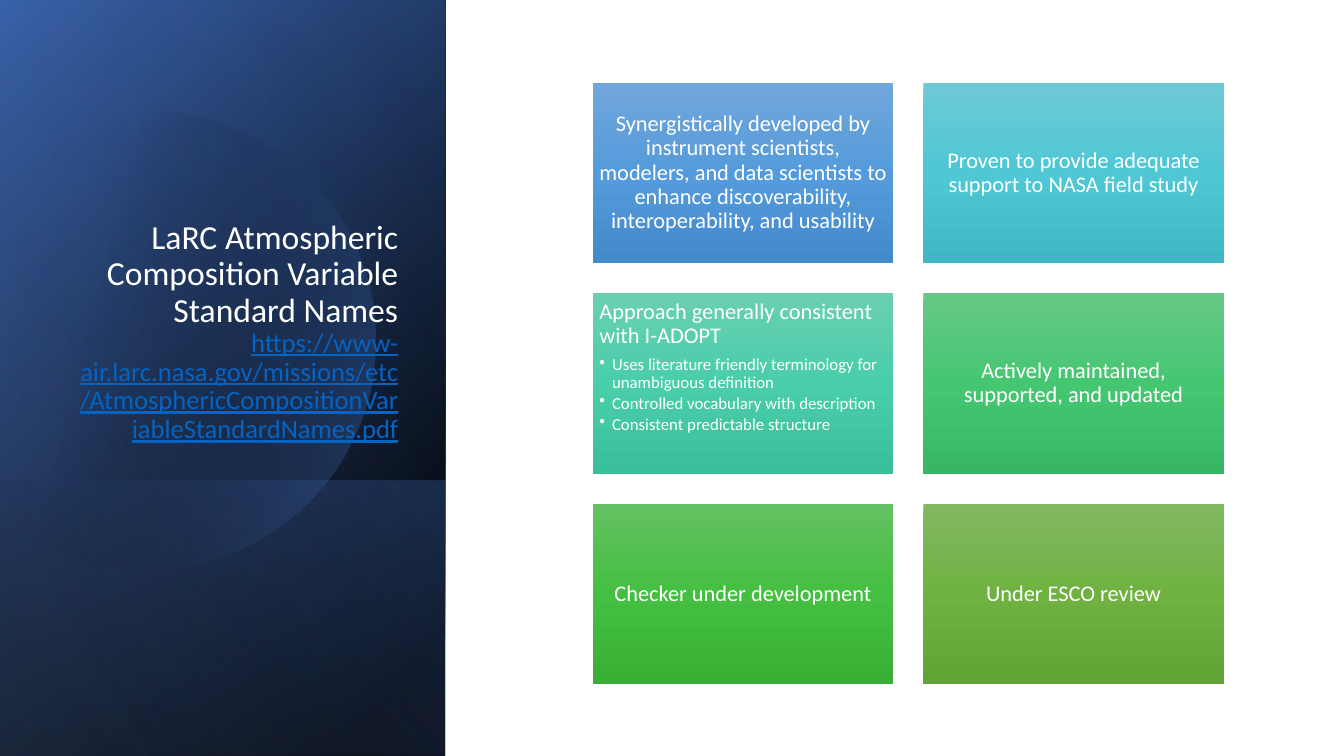
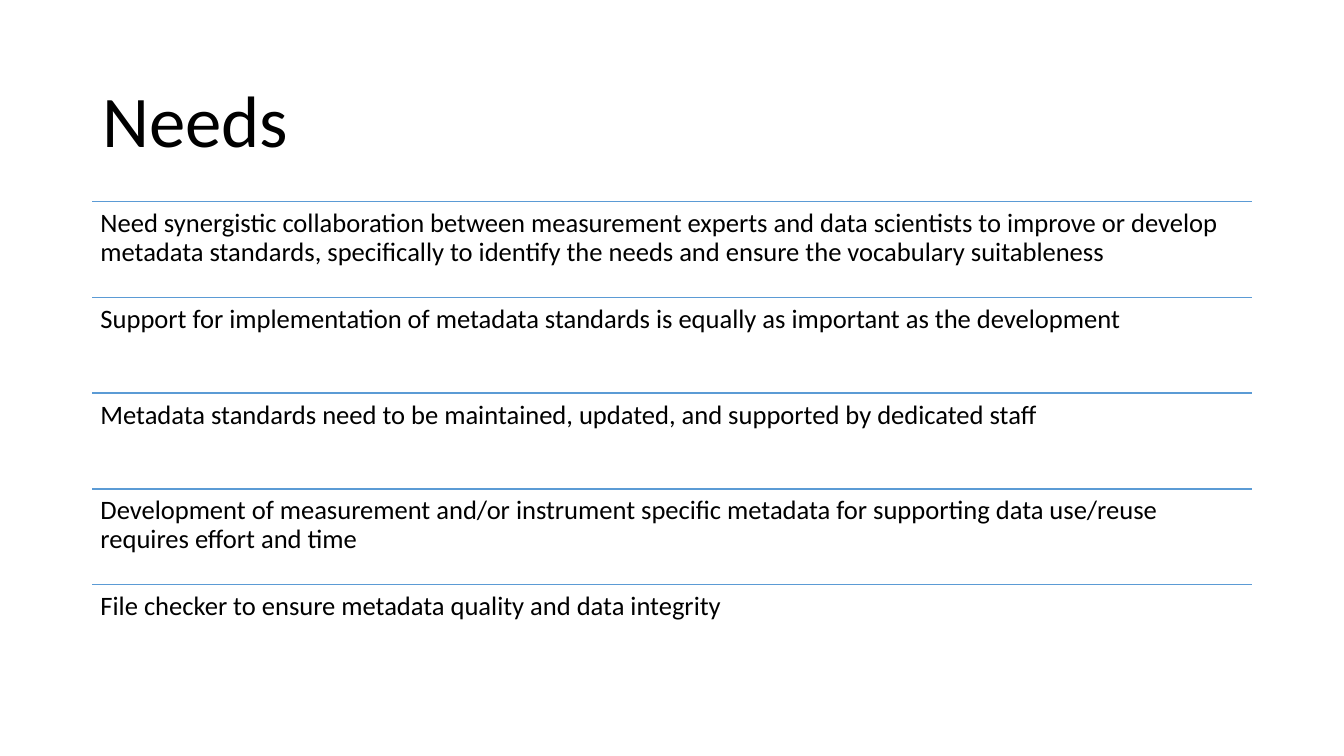
from dataclasses import dataclass
from math import acos, cos, sin

from lxml import etree
from pptx import Presentation
from pptx.dml.color import RGBColor as RGB
from pptx.enum.shapes import MSO_CONNECTOR as LINK, MSO_SHAPE as FORM
from pptx.enum.text import MSO_ANCHOR as ANCHOR, PP_ALIGN as ALIGN
from pptx.oxml.ns import qn
from pptx.util import Pt


@dataclass(frozen=True)
class Theme:
    font: str = "Calibri"
    white: str = "FFFFFF"
    black: str = "000000"
    navy: str = "2F5597"
    blue: str = "4472C4"
    pale: str = "8FAADC"
    link: str = "0563C1"
    rule: str = "5B9BD5"
    cards: tuple = (
        ("71A6DB", "559BDB", "448ACA"), ("6DCAD5", "4FC7D5", "3FB7C4"),
        ("69CFB1", "4ACEAA", "3BBE9A"), ("66C885", "45C772", "37B764"),
        ("64C162", "44BF41", "37B034"), ("81B861", "6FB242", "62A336"))
    head: int = 52
    side: int = 24
    body: int = 19
    card: int = 16
    note: int = 12


class Deck:
    def __init__(self, theme):
        self.theme = theme
        self.prs = Presentation()
        self.prs.slide_width, self.prs.slide_height = Pt(960), Pt(540)
        self.slide = None

    def page(self):
        self.slide = self.prs.slides.add_slide(self.prs.slide_layouts[6])

    def style(self, run, size, color):
        run.font.name = self.theme.font
        run.font.size = Pt(size)
        run.font.color.rgb = RGB.from_string(color)

    def blend(self, shape, stops, angle):
        """Fill with (position, colour, opacity) stops; clockwise angle."""
        shape.shadow.inherit = False
        shape.line.fill.background()
        shape.fill.gradient()
        shape.fill.gradient_angle = 360 - angle
        stoplist = next(shape._element.iter(qn("a:gsLst")))
        for old in list(stoplist):
            stoplist.remove(old)
        for pos, color, alpha in stops:
            stop = etree.SubElement(stoplist, qn("a:gs"), pos=str(pos * 1000))
            tint = etree.SubElement(stop, qn("a:srgbClr"), val=color)
            if alpha < 100:
                etree.SubElement(tint, qn("a:alpha"), val=str(alpha * 1000))

    def block(self, box, stops, angle):
        shape = self.slide.shapes.add_shape(FORM.RECTANGLE, *map(Pt, box))
        self.blend(shape, stops, angle)
        return shape

    def disc(self, x, y, r, stops, angle):
        """Circle cut off by the left slide edge."""
        end, count = acos(-x / r), 90
        turns = [end * (2 * i / count - 1) for i in range(count + 1)]
        dots = [(Pt(x + r * cos(t)), Pt(y + r * sin(t))) for t in turns]
        pen = self.slide.shapes.build_freeform(*dots[0])
        pen.add_line_segments(dots[1:], close=True)
        self.blend(pen.convert_to_shape(), stops, angle)

    def frame(self, shape, anchor, pad):
        frame = shape.text_frame
        frame.word_wrap = True
        frame.vertical_anchor = anchor
        frame.margin_left = frame.margin_right = Pt(pad[0])
        frame.margin_top = frame.margin_bottom = Pt(pad[1])
        return frame

    def para(self, para, size, color, align=ALIGN.LEFT, after=0):
        para.alignment = align
        para.line_spacing = 0.9
        para.space_after = Pt(after)
        for run in para.runs:
            self.style(run, size, color)

    def text(self, box, words, size, color, align=ALIGN.LEFT,
             anchor=ANCHOR.TOP, pad=(7.2, 3.6)):
        shape = self.slide.shapes.add_textbox(*map(Pt, box))
        frame = self.frame(shape, anchor, pad)
        frame.text = words
        self.para(frame.paragraphs[0], size, color, align)
        return frame.paragraphs[0]

    def card(self, box, colors, words, notes):
        t = self.theme
        stops = [(pos, c, 100) for pos, c in zip((0, 50, 100), colors)]
        shape = self.block(box, stops, 90)
        anchor = ANCHOR.TOP if notes else ANCHOR.MIDDLE
        frame = self.frame(shape, anchor, (4.8, 4.8))
        frame.text = words
        align = ALIGN.LEFT if notes else ALIGN.CENTER
        self.para(frame.paragraphs[0], t.card, t.white, align, 5.6)
        for note in notes:
            para = frame.add_paragraph()
            para.text = note
            self.para(para, t.note, t.white, after=1.8)
            props = para._p.get_or_add_pPr()
            props.set("marL", str(Pt(9)))
            props.set("indent", str(Pt(-9)))
            etree.SubElement(props, qn("a:buChar"), char="•")

    def rule(self, x, y, width):
        line = self.slide.shapes.add_connector(
            LINK.STRAIGHT, Pt(x), Pt(y), Pt(x + width), Pt(y))
        line.line.color.rgb = RGB.from_string(self.theme.rule)
        line.line.width = Pt(1)
        etree.SubElement(line._element.spPr, qn("a:effectLst"))


CARDS = (
    ("Synergistically developed by instrument scientists, modelers, and data "
     "scientists to enhance discoverability, interoperability, and usability",
     ()),
    ("Proven to provide adequate support to NASA field study", ()),
    ("Approach generally consistent with I-ADOPT",
     ("Uses literature friendly terminology for unambiguous definition",
      "Controlled vocabulary with description",
      "Consistent predictable structure")),
    ("Actively maintained, supported, and updated", ()),
    ("Checker under development", ()),
    ("Under ESCO review", ()),
)

NEEDS = (
    "Need synergistic collaboration between measurement experts and data "
    "scientists to improve or develop metadata standards, specifically to "
    "identify the needs and ensure the vocabulary suitableness",
    "Support for implementation of metadata standards is equally as "
    "important as the development",
    "Metadata standards need to be maintained, updated, and supported by "
    "dedicated staff",
    "Development of measurement and/or instrument specific metadata for "
    "supporting data use/reuse requires effort and time",
    "File checker to ensure metadata quality and data integrity",
)


def names(deck):
    t = deck.theme
    deck.page()

    # Layered side panel
    panel = (0, 0, 318, 540)
    deck.block(panel, [(8, t.black, 100), (100, t.navy, 100)], 220)
    deck.block(panel, [(0, t.black, 0), (99, t.blue, 46)], 240)
    deck.block((0, 343, 318, 197),
               [(2, t.blue, 29), (100, t.black, 30)], 140)
    deck.disc(104, 243, 164, [(29, t.black, 0), (100, t.blue, 43)], 14)
    deck.block(panel, [(0, t.black, 0), (99, t.pale, 11)], 150)

    # Title with address
    title = deck.text(
        (46, 132.5, 245.5, 188.5),
        "LaRC Atmospheric Composition Variable Standard Names\v"
        "https://www-air.larc.nasa.gov/missions/etc/"
        "AtmosphericCompositionVariableStandardNames.pdf",
        t.side, t.white, ALIGN.RIGHT, ANCHOR.BOTTOM)
    site = title.runs[1]
    deck.style(site, t.body, t.link)
    site.font.underline = True

    # Card grid
    left, top, width, height, gap = 423.4, 59, 214.7, 129, 21.4
    for i, (words, notes) in enumerate(CARDS):
        row, col = divmod(i, 2)
        box = (left + col * (width + gap), top + row * (height + gap),
               width, height)
        deck.card(box, t.cards[i], words, notes)


def needs(deck):
    t = deck.theme
    deck.page()
    left, top, width, step = 66, 144, 828, 68.4
    deck.text((left, 44, width, 89), "Needs", t.head, t.black,
              anchor=ANCHOR.MIDDLE)

    # Ruled rows
    for i, words in enumerate(NEEDS):
        y = top + i * step
        deck.rule(left, y, width)
        deck.text((left, y, width, step), words, t.body, t.black,
                  pad=(5.8, 5.8))


def main():
    deck = Deck(Theme())
    names(deck)
    needs(deck)
    deck.prs.save("out.pptx")


if __name__ == "__main__":
    main()
